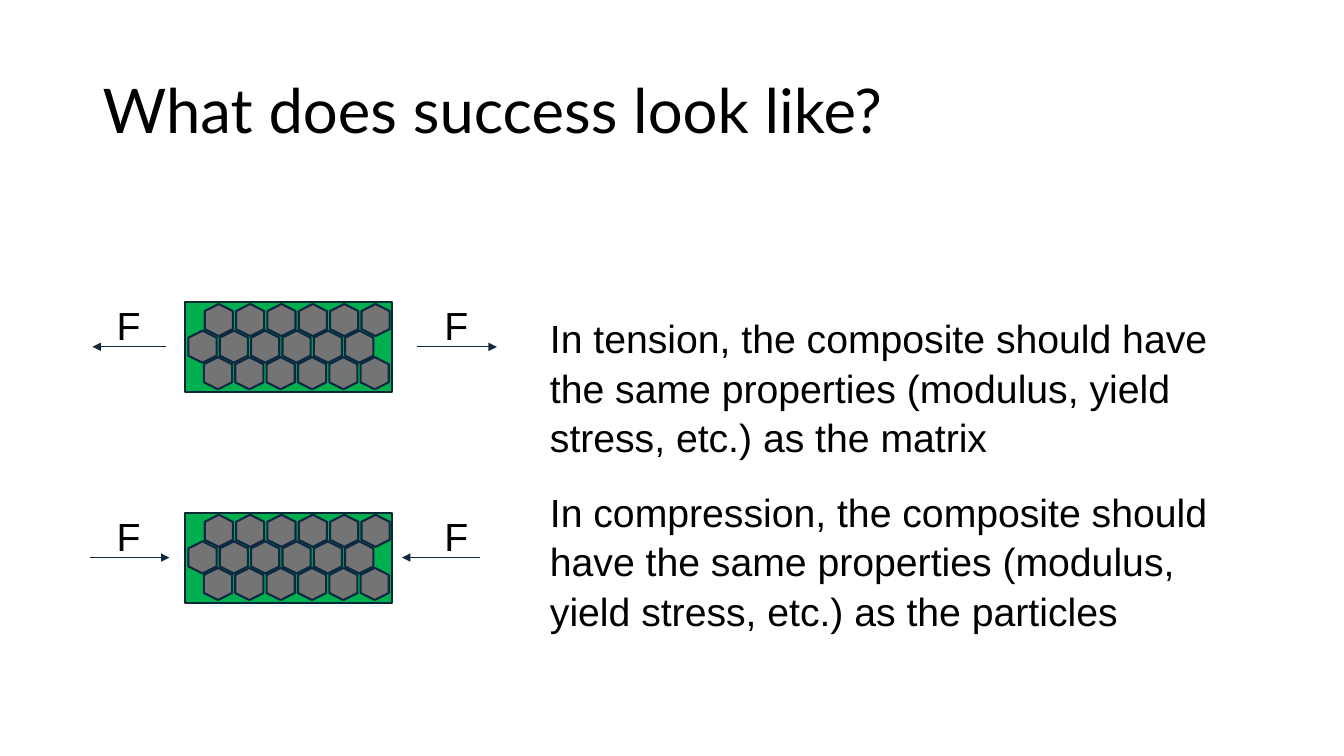
from lxml.etree import SubElement
from pptx import Presentation
from pptx.dml.color import RGBColor
from pptx.enum.shapes import MSO_CONNECTOR, MSO_SHAPE
from pptx.enum.text import MSO_ANCHOR, PP_ALIGN
from pptx.oxml.ns import qn
from pptx.util import Cm, Pt

MATRIX_GREEN, MATRIX_EDGE = "00B050", "082836"
PARTICLE_GRAY, NAVY = "747474", "0E2841"


def add_solid(shapes, kind, left, top, width, height, fill, edge):
    shape = shapes.add_shape(kind, Cm(left), Cm(top), Cm(width), Cm(height))
    shape.shadow.inherit = False
    shape.fill.solid()
    shape.fill.fore_color.rgb = RGBColor.from_string(fill)
    shape.line.color.rgb = RGBColor.from_string(edge)
    shape.line.width = Pt(1.5)
    return shape


def write(frame, text, font_name, size, line_spacing):
    """Fill the frame with one left-aligned black paragraph."""
    frame.word_wrap = True
    paragraph = frame.paragraphs[0]
    paragraph.text = text
    paragraph.alignment = PP_ALIGN.LEFT
    paragraph.line_spacing = line_spacing
    paragraph.font.name = font_name
    paragraph.font.size = Pt(size)
    paragraph.font.color.rgb = RGBColor.from_string("000000")


presentation = Presentation()
presentation.slide_width = Cm(33.87)
presentation.slide_height = Cm(19.05)
slide = presentation.slides.add_slide(presentation.slide_layouts[5])

title = slide.shapes.title
title.left, title.top, title.width, title.height = Cm(2.33), Cm(1.02), Cm(29.21), Cm(3.68)
title.text_frame.vertical_anchor = MSO_ANCHOR.MIDDLE
write(title.text_frame, "What does success look like?", "Lato", 44, 0.9)

# Each load case: top of the composite, arrows (from x, to x), top of the text, text
load_cases = [
    (7.62, [(10.52, 12.52), (4.19, 2.33)], 7.62,
     "In tension, the composite should have the same properties "
     "(modulus, yield stress, etc.) as the matrix"),
    (12.93, [(2.26, 4.27), (12.09, 10.13)], 11.99,
     "In compression, the composite should have the same properties "
     "(modulus, yield stress, etc.) as the particles"),
]
row_starts = [5.11, 4.7, 5.09]

for composite_top, arrows, text_top, statement in load_cases:
    composite = slide.shapes.add_group_shape()
    add_solid(composite.shapes, MSO_SHAPE.RECTANGLE, 4.67, composite_top, 5.21, 2.26,
              MATRIX_GREEN, MATRIX_EDGE)
    for row, row_start in enumerate(row_starts):
        for column in range(6):
            particle = add_solid(
                composite.shapes, MSO_SHAPE.HEXAGON, row_start + 0.79 * column,
                composite_top + 0.09 + 0.67 * row, 0.81, 0.71, PARTICLE_GRAY, NAVY)
            particle.rotation = 270

    arrow_y = Cm(composite_top + 1.12)
    for start_x, end_x in arrows:
        arrow = slide.shapes.add_connector(
            MSO_CONNECTOR.STRAIGHT, Cm(start_x), arrow_y, Cm(end_x), arrow_y)
        arrow.line.color.rgb = RGBColor.from_string(NAVY)
        arrow.line.width = Pt(0.75)
        SubElement(arrow.line._get_or_add_ln(), qn("a:tailEnd"), type="triangle")
        SubElement(arrow._element.spPr, qn("a:effectLst"))

    force_top = composite_top - 0.33
    for left, top, width, text in [(10.95, force_top, 1.14, "F"),
                                   (2.69, force_top, 1.14, "F"),
                                   (13.61, text_top, 17.32, statement)]:
        frame = slide.shapes.add_textbox(Cm(left), Cm(top), Cm(width), Cm(1.14)).text_frame
        frame.margin_left = frame.margin_right = Cm(0.25)
        frame.margin_top = frame.margin_bottom = Cm(0.25)
        write(frame, text, "Arial", 28, 1.05)

presentation.save("out.pptx")
